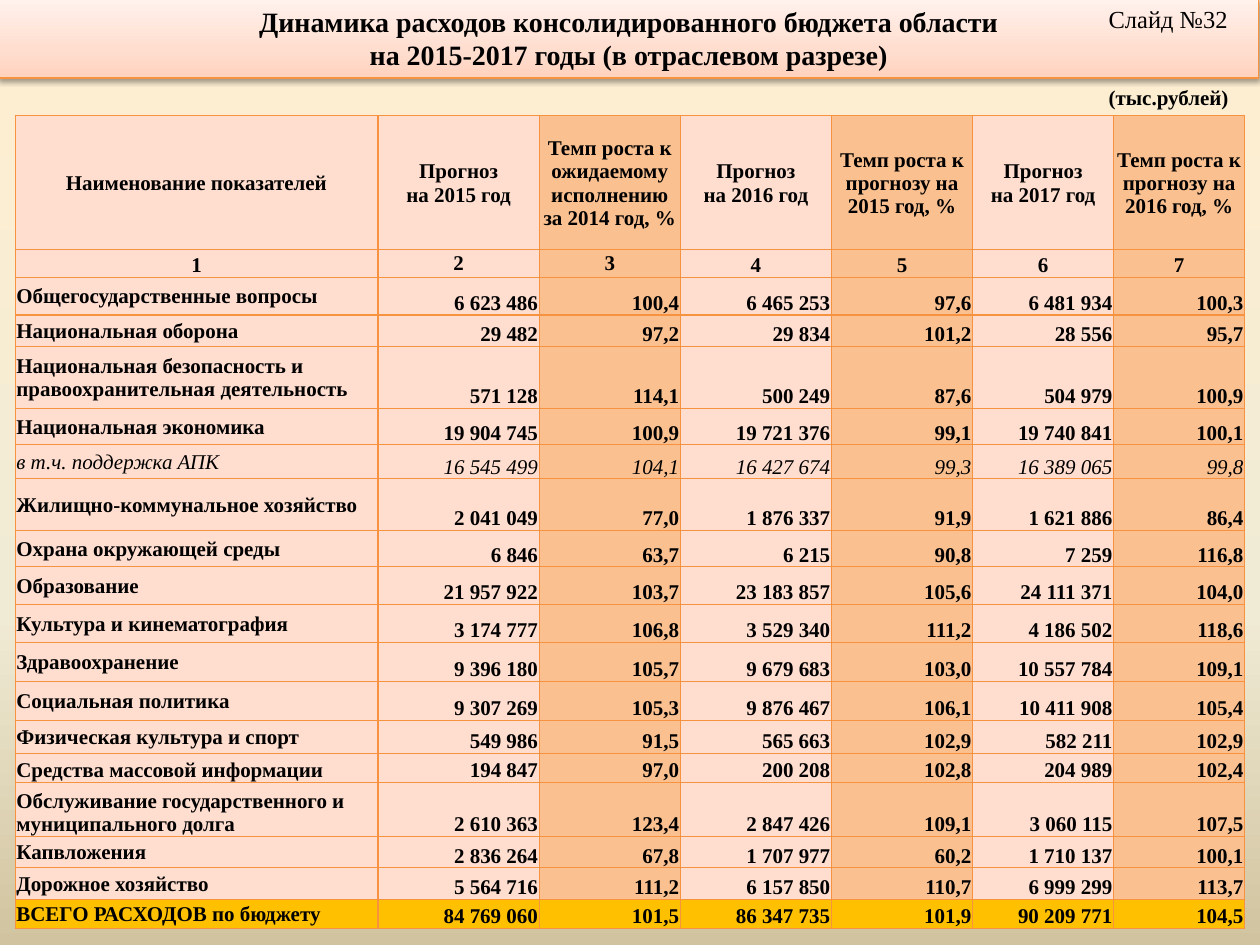
"""Build the slide on consolidated regional budget spending for 2015-2017."""
from lxml import etree
from pptx import Presentation
from pptx.dml.color import RGBColor
from pptx.enum.shapes import MSO_SHAPE
from pptx.enum.text import MSO_ANCHOR, PP_ALIGN
from pptx.oxml import parse_xml
from pptx.util import Inches, Pt

RECT = MSO_SHAPE.RECTANGLE
MID, LOW = MSO_ANCHOR.MIDDLE, MSO_ANCHOR.BOTTOM
LEFT, MIDST, RIGHT = PP_ALIGN.LEFT, PP_ALIGN.CENTER, PP_ALIGN.RIGHT
FONT = "Times New Roman"
NS = "http://schemas.openxmlformats.org/drawingml/2006/main"
HUES = {"ink": "000000", "line": "F69240", "pink": "FFDED0",
        "peach": "FAC090", "gold": "FFC000"}
SKY = [(0, "FFEFD1"), (65, "F0EBD5"), (100, "D1C39F")]
GLOW = [(0, "FFD2BD"), (35, "FFDED0"), (100, "FFF2ED")]
COLS = [2.88, 1.28, 1.12, 1.2, 1.12, 1.12, 1.04]
ROWS = [1.06, 0.22, 0.3, 0.25, 0.49, 0.29, 0.27, 0.41, 0.29, 0.3,
        0.3, 0.31, 0.31, 0.26, 0.23, 0.43, 0.25, 0.25, 0.23]
DATA = [
    ["Наименование показателей",
     "Прогноз\nна 2015 год", "Темп роста к ожидаемому исполнению за 2014 год, %",
     "Прогноз\nна 2016 год", "Темп роста к прогнозу на 2015 год, %",
     "Прогноз\nна 2017 год", "Темп роста к прогнозу на 2016 год, %"],
    ["1", "2", "3", "4", "5", "6", "7"],
    ["Общегосударственные вопросы",
     "6 623 486", "100,4", "6 465 253", "97,6", "6 481 934", "100,3"],
    ["Национальная оборона",
     "29 482", "97,2", "29 834", "101,2", "28 556", "95,7"],
    ["Национальная безопасность и правоохранительная деятельность",
     "571 128", "114,1", "500 249", "87,6", "504 979", "100,9"],
    ["Национальная экономика",
     "19 904 745", "100,9", "19 721 376", "99,1", "19 740 841", "100,1"],
    ["в т.ч. поддержка АПК",
     "16 545 499", "104,1", "16 427 674", "99,3", "16 389 065", "99,8"],
    ["Жилищно-коммунальное хозяйство",
     "2 041 049", "77,0", "1 876 337", "91,9", "1 621 886", "86,4"],
    ["Охрана окружающей среды",
     "6 846", "63,7", "6 215", "90,8", "7 259", "116,8"],
    ["Образование",
     "21 957 922", "103,7", "23 183 857", "105,6", "24 111 371", "104,0"],
    ["Культура и кинематография",
     "3 174 777", "106,8", "3 529 340", "111,2", "4 186 502", "118,6"],
    ["Здравоохранение",
     "9 396 180", "105,7", "9 679 683", "103,0", "10 557 784", "109,1"],
    ["Социальная политика",
     "9 307 269", "105,3", "9 876 467", "106,1", "10 411 908", "105,4"],
    ["Физическая культура и спорт",
     "549 986", "91,5", "565 663", "102,9", "582 211", "102,9"],
    ["Средства массовой информации",
     "194 847", "97,0", "200 208", "102,8", "204 989", "102,4"],
    ["Обслуживание государственного и муниципального долга",
     "2 610 363", "123,4", "2 847 426", "109,1", "3 060 115", "107,5"],
    ["Капвложения",
     "2 836 264", "67,8", "1 707 977", "60,2", "1 710 137", "100,1"],
    ["Дорожное хозяйство",
     "5 564 716", "111,2", "6 157 850", "110,7", "6 999 299", "113,7"],
    ["ВСЕГО РАСХОДОВ по бюджету",
     "84 769 060", "101,5", "86 347 735", "101,9", "90 209 771", "104,5"],
]


def grade(props, stops, turn):
    marks = "".join(f'<a:gs pos="{pos * 1000}"><a:srgbClr val="{hue}"/></a:gs>'
                    for pos, hue in stops)
    fill = parse_xml(f'<a:gradFill xmlns:a="{NS}" rotWithShape="1"><a:gsLst>{marks}'
                     f'</a:gsLst><a:lin ang="{turn * 60000}" scaled="0"/></a:gradFill>')
    props.replace(props.find(f"{{{NS}}}solidFill"), fill)


def write(frame, text, size, align=LEFT, bold=True, slant=False):
    frame.text = text
    frame.word_wrap = True
    for par in frame.paragraphs:
        par.alignment = align
        font = par.font
        font.name, font.size = FONT, Pt(size)
        font.bold, font.italic = bold, slant
        font.color.rgb = RGBColor.from_string(HUES["ink"])


deck = Presentation()
deck.slide_width, deck.slide_height = Inches(10), Inches(7.5)
slide = deck.slides.add_slide(deck.slide_layouts[6])
slide.background.fill.solid()
grade(slide.element.cSld.bg.bgPr, SKY, 90)

band = slide.shapes.add_shape(RECT, Inches(-0.01), Inches(-0.02), Inches(10), Inches(0.64))
band.fill.solid()
grade(band.element.spPr, GLOW, 270)
band.line.color.rgb = RGBColor.from_string(HUES["line"])
band.line.width = Pt(0.75)
band.shadow.inherit = False
band.element.spPr.find(f"{{{NS}}}effectLst").append(parse_xml(
    f'<a:outerShdw xmlns:a="{NS}" blurRad="40000" dist="20000" dir="5400000" rotWithShape="0">'
    f'<a:srgbClr val="{HUES["ink"]}"><a:alpha val="38000"/></a:srgbClr></a:outerShdw>'))
band.text_frame.vertical_anchor = MID
write(band.text_frame, "Динамика расходов консолидированного бюджета области\n"
      "на 2015-2017 годы (в отраслевом разрезе)", 16, MIDST)

for text, top, wide, high, size, bold in [("Слайд №32", -0.02, 1.77, 0.34, 14, False),
                                          ("(тыс.рублей)", 0.62, 1.18, 0.3, 12, True)]:
    box = slide.shapes.add_textbox(Inches(8.7), Inches(top), Inches(wide), Inches(high))
    write(box.text_frame, text, size, bold=bold)

grid = slide.shapes.add_table(len(ROWS), len(COLS), Inches(0.12), Inches(0.92),
                              Inches(sum(COLS)), Inches(sum(ROWS))).table
grid.first_row = grid.horz_banding = False
for col, wide in zip(grid.columns, COLS):
    col.width = Inches(wide)
for row, high in zip(grid.rows, ROWS):
    row.height = Inches(high)

last = len(ROWS) - 1
for r, row in enumerate(DATA):
    for c, text in enumerate(row):
        cell = grid.cell(r, c)
        align = MIDST if r < 2 else RIGHT if c else LEFT
        write(cell.text_frame, text, 12, align, bold=r != 6, slant=r == 6)
        if r == 1:
            mid = c in (1, 2)
        else:
            mid = r == 0 or (c == 0 and r not in (14, 15))
        cell.vertical_anchor = MID if mid else LOW
        cell.margin_left = cell.margin_right = cell.margin_top = Inches(0.01)
        cell.margin_bottom = 0
        hue = "gold" if r == last else "peach" if c in (2, 4, 6) else "pink"
        cell.fill.solid()
        cell.fill.fore_color.rgb = RGBColor.from_string(HUES[hue])
        props = cell._tc.get_or_add_tcPr()
        for i, side in enumerate("LRTB"):
            edge = etree.Element(f"{{{NS}}}ln{side}", w=str(Pt(0.75)))
            paint = etree.SubElement(edge, f"{{{NS}}}solidFill")
            etree.SubElement(paint, f"{{{NS}}}srgbClr", val=HUES["line"])
            props.insert(i, edge)

deck.save("out.pptx")
